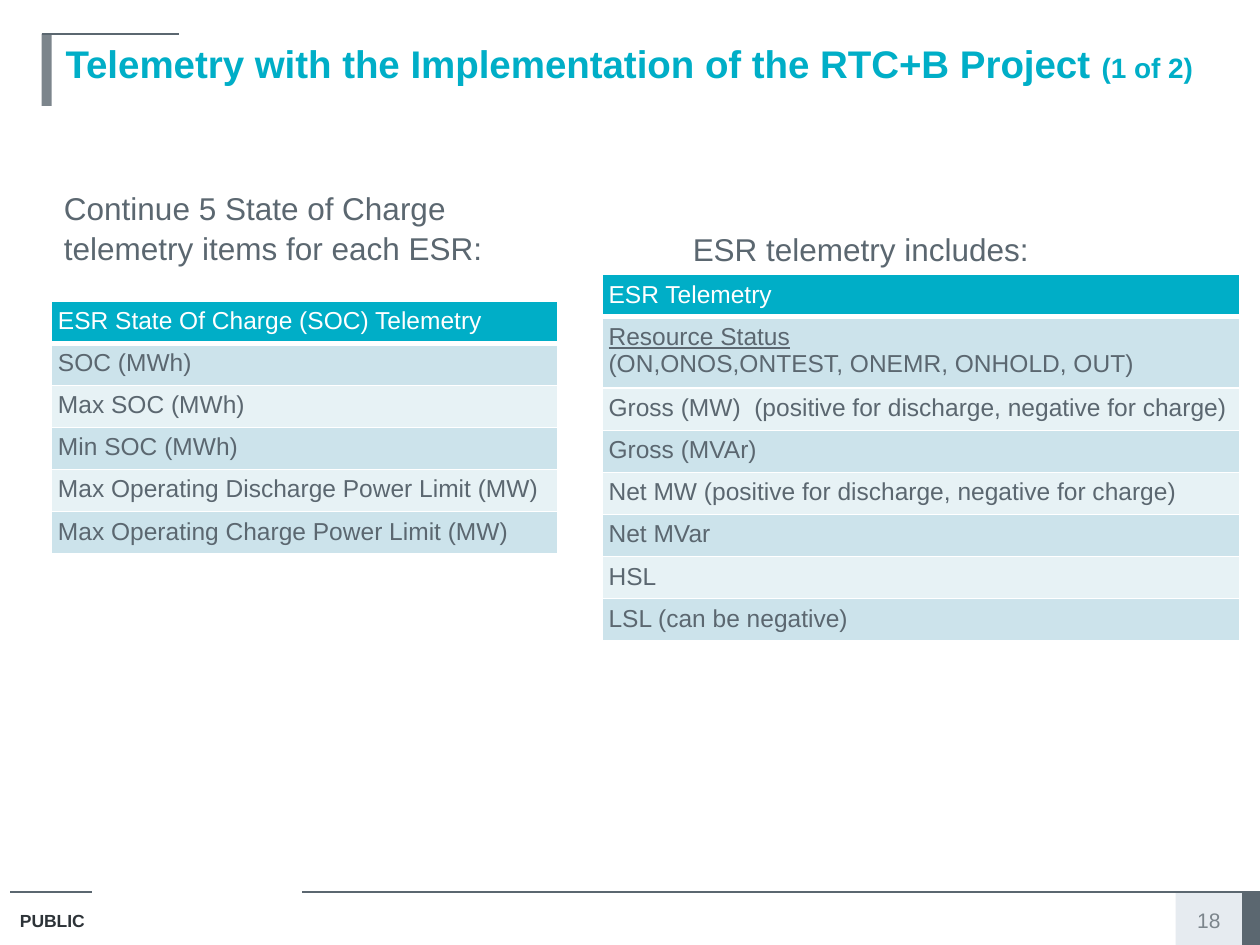
from dataclasses import dataclass

from lxml import etree
from pptx import Presentation
from pptx.dml.color import RGBColor
from pptx.enum.shapes import MSO_CONNECTOR, MSO_SHAPE
from pptx.enum.text import MSO_ANCHOR, MSO_AUTO_SIZE, PP_ALIGN
from pptx.oxml.ns import qn
from pptx.util import Inches, Pt

RECT = MSO_SHAPE.RECTANGLE
STRAIGHT = MSO_CONNECTOR.STRAIGHT
TOP, MIDDLE = MSO_ANCHOR.TOP, MSO_ANCHOR.MIDDLE
LEFT, CENTER = PP_ALIGN.LEFT, PP_ALIGN.CENTER
NO_FIT = MSO_AUTO_SIZE.NONE


@dataclass(frozen=True)
class Theme:
    font: str = "Arial"
    accent: str = "00AEC7"
    slate: str = "5B6770"
    gray: str = "7C858C"
    dark: str = "2D3338"
    white: str = "FFFFFF"
    pale: str = "E6EBF0"
    bands: tuple = ("CCE3EB", "E7F2F5")
    title: int = 22
    subtitle: int = 16
    body: int = 18
    table: int = 14
    number: int = 12
    label: int = 10


class SlideBuilder:
    def __init__(self, prs, theme):
        self.theme = theme
        self.s = prs.slides.add_slide(prs.slide_layouts[5])

    def run(self, p, text, size, color, **extra):
        r = p.add_run()
        r.text = text
        style = {"name": self.theme.font, "size": Pt(size), **extra}
        for name, value in style.items():
            setattr(r.font, name, value)
        r.font.color.rgb = RGBColor.from_string(color)

    def title(self, box, runs):
        sp = self.s.shapes.title
        sp.left, sp.top, sp.width, sp.height = map(Inches, box)
        tf = sp.text_frame
        tf.auto_size, tf.word_wrap, tf.vertical_anchor = NO_FIT, True, TOP
        p = tf.paragraphs[0]
        p.alignment = LEFT
        for text, size in runs:
            self.run(p, text, size, self.theme.accent, bold=True)

    def text(self, box, text, size, color, align=LEFT, anchor=TOP, spacing=1.0, **extra):
        tf = self.s.shapes.add_textbox(*map(Inches, box)).text_frame
        tf.word_wrap, tf.vertical_anchor = True, anchor
        p = tf.paragraphs[0]
        p.alignment, p.line_spacing = align, spacing
        self.run(p, text, size, color, **extra)

    def rect(self, box, fill, outlined=False):
        sp = self.s.shapes.add_shape(RECT, *map(Inches, box))
        sp.shadow.inherit = False
        sp.fill.solid()
        sp.fill.fore_color.rgb = RGBColor.from_string(fill)
        if outlined:
            sp.line.color.rgb = RGBColor.from_string(fill)
            sp.line.width = Pt(0.75)
        else:
            sp.line.fill.background()

    def rule(self, x1, x2, y):
        line = self.s.shapes.add_connector(STRAIGHT, *map(Inches, (x1, y, x2, y)))
        line.line.color.rgb = RGBColor.from_string(self.theme.slate)
        line.line.width = Pt(0.75)
        etree.SubElement(line._element.spPr, qn("a:effectLst"))

    def borders(self, cell, bottom):
        """Draw white cell borders; they must precede the cell fill in the XML."""
        tc_pr = cell._tc.get_or_add_tcPr()
        for side, width in (("L", 1), ("R", 1), ("T", 1), ("B", bottom)):
            ln = etree.SubElement(tc_pr, qn(f"a:ln{side}"), w=str(Pt(width)))
            fill = etree.SubElement(ln, qn("a:solidFill"))
            etree.SubElement(fill, qn("a:srgbClr"), val=self.theme.white)

    def table(self, left, top, width, rows):
        """Build a one-column table; each row is a list of (text, underline) lines."""
        t = self.theme
        heights = [Inches(0.31 + 0.22 * (len(lines) - 1)) for lines in rows]
        table = self.s.shapes.add_table(
            len(rows), 1, Inches(left), Inches(top), Inches(width), sum(heights)
        ).table
        for i, (lines, height) in enumerate(zip(rows, heights)):
            table.rows[i].height = height
            cell = table.cell(i, 0)
            for side in ("left", "right", "top", "bottom"):
                setattr(cell, f"margin_{side}", Inches(0.05))
            self.borders(cell, bottom=1 if i else 3)
            cell.fill.solid()
            fill = t.bands[(i - 1) % 2] if i else t.accent
            cell.fill.fore_color.rgb = RGBColor.from_string(fill)
            tf = cell.text_frame
            for j, (text, underline) in enumerate(lines):
                p = tf.add_paragraph() if j else tf.paragraphs[0]
                self.run(p, text, t.table, t.slate if i else t.white,
                         bold=False, underline=underline)


def plain(*texts):
    return [[(text, False)] for text in texts]


def main():
    prs = Presentation()
    prs.slide_width, prs.slide_height = Inches(10), Inches(7.5)
    t = Theme()
    b = SlideBuilder(prs, t)

    footer_y = 7.08
    b.rect((9.33, footer_y, 0.58, 0.42), t.pale)
    b.rect((9.86, footer_y, 0.14, 0.42), t.slate, outlined=True)
    b.rule(0.08, 0.73, footer_y)
    b.rule(2.4, 9.9, footer_y)
    b.text((0.06, 7.17, 1.02, 0.27), "PUBLIC", t.label, t.dark, bold=True)
    b.text((9.33, 7.18, 0.53, 0.24), "18", t.number, t.gray, CENTER, MIDDLE)

    b.rect((0.33, 0.27, 0.08, 0.57), t.gray)
    b.rule(0.33, 1.42, 0.27)
    b.title((0.42, 0.27, 9.25, 0.57), [
        ("Telemetry with the Implementation of the RTC+B Project ", t.title),
        ("(1 of 2)", t.subtitle),
    ])

    b.text((0.41, 1.44, 3.64, 0.54),
           "Continue 5 State of Charge telemetry items for each ESR:",
           t.body, t.slate, spacing=1.05)
    b.table(0.41, 2.39, 4.02, plain(
        "ESR State Of Charge (SOC) Telemetry",
        "SOC (MWh)",
        "Max SOC (MWh)",
        "Min SOC (MWh)",
        "Max Operating Discharge Power Limit (MW)",
        "Max Operating Charge Power Limit (MW)",
    ))

    b.text((5.4, 1.78, 3.44, 0.4), "ESR telemetry includes:", t.body, t.slate)
    status = [("Resource Status", True),
              ("(ON,ONOS,ONTEST, ONEMR, ONHOLD, OUT)", False)]
    b.table(4.78, 2.18, 5.06, plain("ESR Telemetry") + [status] + plain(
        "Gross (MW)  (positive for discharge, negative for charge)",
        "Gross (MVAr)",
        "Net MW (positive for discharge, negative for charge)",
        "Net MVar",
        "HSL",
        "LSL (can be negative)",
    ))
    prs.save("out.pptx")


if __name__ == "__main__":
    main()
